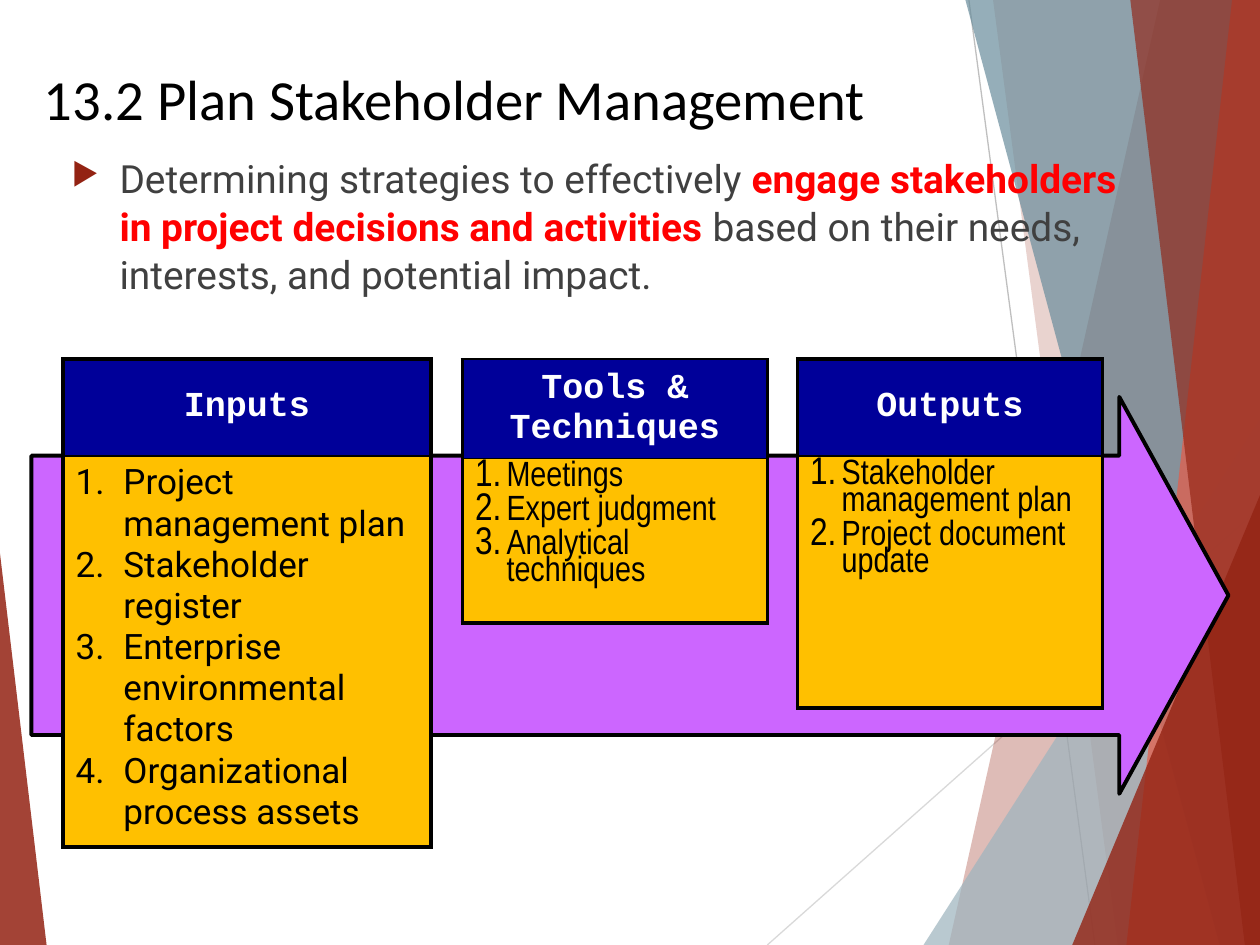
import pptx
import pptx.util
import pptx.dml.color
import pptx.enum.shapes
import pptx.enum.text
import pptx.oxml.ns
from lxml import etree
from pptx.util import Inches, Pt

COLORS = {
    "black": "000000", "white": "FFFFFF", "body": "404040", "highlight": "FF0000",
    "arrow": "CC66FF", "header": "000099", "cell": "FFC000",
    "dark_red": "932313", "light_red": "E75C48", "steel": "698D9C", "pale_steel": "9EB5BF",
    "gray": "BFBFBF", "light_gray": "D9D9D9",
}
SHAPES = pptx.enum.shapes.MSO_SHAPE


def rgb(name):
    return pptx.dml.color.RGBColor.from_string(COLORS[name])


def add_element(parent, tag, **attributes):
    element = etree.SubElement(parent, pptx.oxml.ns.qn(tag))
    for key, value in attributes.items():
        element.set(key, str(value))
    return element


def paint(shape, color, opacity=100):
    """Give a shape a plain fill with no line or shadow."""
    shape.shadow.inherit = False
    shape.line.fill.background()
    shape.fill.solid()
    shape.fill.fore_color.rgb = rgb(color)
    if opacity < 100:
        color_element = shape.fill._xPr.find(".//" + pptx.oxml.ns.qn("a:srgbClr"))
        add_element(color_element, "a:alpha", val=opacity * 1000)


def add_line(slide, start, end, color):
    line = slide.shapes.add_connector(
        pptx.enum.shapes.MSO_CONNECTOR.STRAIGHT, *map(Inches, start + end))
    line.line.color.rgb = rgb(color)
    line.line.width = Pt(0.75)
    add_element(line._element.spPr, "a:effectLst")


def add_band(slide, top_left, bottom_left, color, opacity):
    """Fill the area between a slanted edge and the right side of the slide."""
    builder = slide.shapes.build_freeform(Inches(top_left), Inches(-0.01))
    corners = [(10, -0.01), (10, 7.5), (bottom_left, 7.5)]
    builder.add_line_segments([(Inches(x), Inches(y)) for x, y in corners])
    paint(builder.convert_to_shape(), color, opacity)


def add_triangle(slide, left, top, width, apex, color, opacity):
    """Add a triangle that stands on the bottom edge of the slide."""
    triangle = slide.shapes.add_shape(
        SHAPES.ISOSCELES_TRIANGLE, Inches(left), Inches(top), Inches(width), Inches(7.5 - top))
    triangle.adjustments[0] = apex
    paint(triangle, color, opacity)


def add_background(slide):
    add_line(slide, (7.69, 0), (8.69, 7.5), "gray")
    add_line(slide, (10, 4.03), (6.09, 7.5), "light_gray")
    add_band(slide, 9.21, 7.53, "dark_red", 30)
    add_band(slide, 7.88, 8.87, "dark_red", 20)
    add_triangle(slide, 7.33, 3.33, 2.67, 1, "pale_steel", 72)
    add_band(slide, 7.66, 9.68, "steel", 70)
    add_band(slide, 9.78, 8.94, "light_red", 70)
    add_band(slide, 8.97, 9.88, "dark_red", 65)
    add_triangle(slide, 8.51, 3.93, 1.49, 1, "dark_red", 80)
    add_triangle(slide, 0, 4.39, 0.37, 0, "dark_red", 85)


def add_process_arrow(slide):
    arrow = slide.shapes.add_shape(
        SHAPES.RIGHT_ARROW, Inches(0.25), Inches(3.15), Inches(9.5), Inches(3.15))
    arrow.adjustments[0] = 0.704
    arrow.adjustments[1] = 0.275
    paint(arrow, "arrow")
    arrow.line.color.rgb = rgb("black")
    arrow.line.width = Pt(2.25)


def set_font(font, name, size, color, bold=False):
    font.name = name
    font.size = Pt(size)
    font.bold = bold
    font.color.rgb = rgb(color)


def add_text_frame(slide, left, top, width, height):
    box = slide.shapes.add_textbox(Inches(left), Inches(top), Inches(width), Inches(height))
    box.text_frame.word_wrap = True
    return box.text_frame


def hang(paragraph, indent):
    """Set a hanging indent and return the paragraph properties."""
    properties = paragraph._p.get_or_add_pPr()
    properties.set("marL", str(Inches(indent)))
    properties.set("indent", str(-Inches(indent)))
    return properties


def add_title(slide):
    paragraph = add_text_frame(slide, 0.25, 0.46, 8.33, 0.42).paragraphs[0]
    paragraph.text = "13.2 Plan Stakeholder Management"
    set_font(paragraph.font, "Calibri", 32.4, "black")


def add_definition(slide):
    paragraph = add_text_frame(slide, 0.47, 1.17, 8.58, 1.5).paragraphs[0]
    paragraph.line_spacing = 1.03
    properties = hang(paragraph, 0.38)
    bullet_color = add_element(properties, "a:buClr")
    add_element(bullet_color, "a:srgbClr", val=COLORS["dark_red"])
    add_element(properties, "a:buSzPct", val=80000)
    add_element(properties, "a:buChar", char="▶")
    for text, color, bold in [
        ("Determining strategies to effectively ", "body", False),
        ("engage stakeholders in project decisions and activities ", "highlight", True),
        ("based on their needs, interests, and potential impact.", "body", False),
    ]:
        run = paragraph.add_run()
        run.text = text
        set_font(run.font, "Roboto", 22.2, color, bold)


def style_cell(cell, color, top, bottom):
    """Fill a cell and draw its borders; the sides are always thick."""
    properties = cell._tc.get_or_add_tcPr()
    for side, width in [("L", 2.25), ("R", 2.25), ("T", top), ("B", bottom)]:
        border = add_element(properties, f"a:ln{side}", w=Pt(width))
        fill = add_element(border, "a:solidFill")
        add_element(fill, "a:srgbClr", val=COLORS["black"])
    cell.fill.solid()
    cell.fill.fore_color.rgb = rgb(color)


def add_card(slide, left, width, heights, heading, items, narrow=True, top_border=2.25):
    """Add a two-row table: a heading above a numbered list."""
    table = slide.shapes.add_table(
        2, 1, Inches(left), Inches(2.85), Inches(width), Inches(sum(heights))).table
    table.horz_banding = False
    for row, height in zip(table.rows, heights):
        row.height = Inches(height)
    header, body = table.cell(0, 0), table.cell(1, 0)
    style_cell(header, "header", top_border, 1)
    style_cell(body, "cell", 1, 2.25)

    header.vertical_anchor = pptx.enum.text.MSO_ANCHOR.MIDDLE
    paragraph = header.text_frame.paragraphs[0]
    paragraph.text = heading
    paragraph.alignment = pptx.enum.text.PP_ALIGN.CENTER
    set_font(paragraph.font, "Courier New", 20, "white", True)

    body.text_frame.text = "\n".join(items)
    for paragraph in body.text_frame.paragraphs:
        set_font(paragraph.font, "Arial Narrow" if narrow else "Roboto", 20, "black")
        if narrow:
            paragraph.line_spacing = 0.82
            paragraph.space_before = Pt(4)
        properties = hang(paragraph, 0.25 if narrow else 0.38)
        if narrow:
            add_element(properties, "a:buSzPct", val=110000)
        add_element(properties, "a:buFont", typeface="+mj-lt" if not narrow else "Arial Narrow")
        add_element(properties, "a:buAutoNum", type="arabicPeriod")


def main():
    presentation = pptx.Presentation()
    presentation.slide_width = Inches(10)
    presentation.slide_height = Inches(7.5)
    slide = presentation.slides.add_slide(presentation.slide_layouts[6])
    add_background(slide)
    add_process_arrow(slide)
    add_title(slide)
    add_definition(slide)
    add_card(slide, 0.5, 2.92, (0.77, 3.03), "Inputs", [
        "Project management plan", "Stakeholder register",
        "Enterprise environmental factors", "Organizational process assets"], narrow=False)
    add_card(slide, 3.67, 2.42, (0.79, 1.26), "Tools & Techniques", [
        "Meetings", "Expert judgment", "Analytical techniques"], top_border=1)
    add_card(slide, 6.33, 2.42, (0.77, 2), "Outputs", [
        "Stakeholder management plan", "Project document update"])
    presentation.save("out.pptx")


if __name__ == "__main__":
    main()
